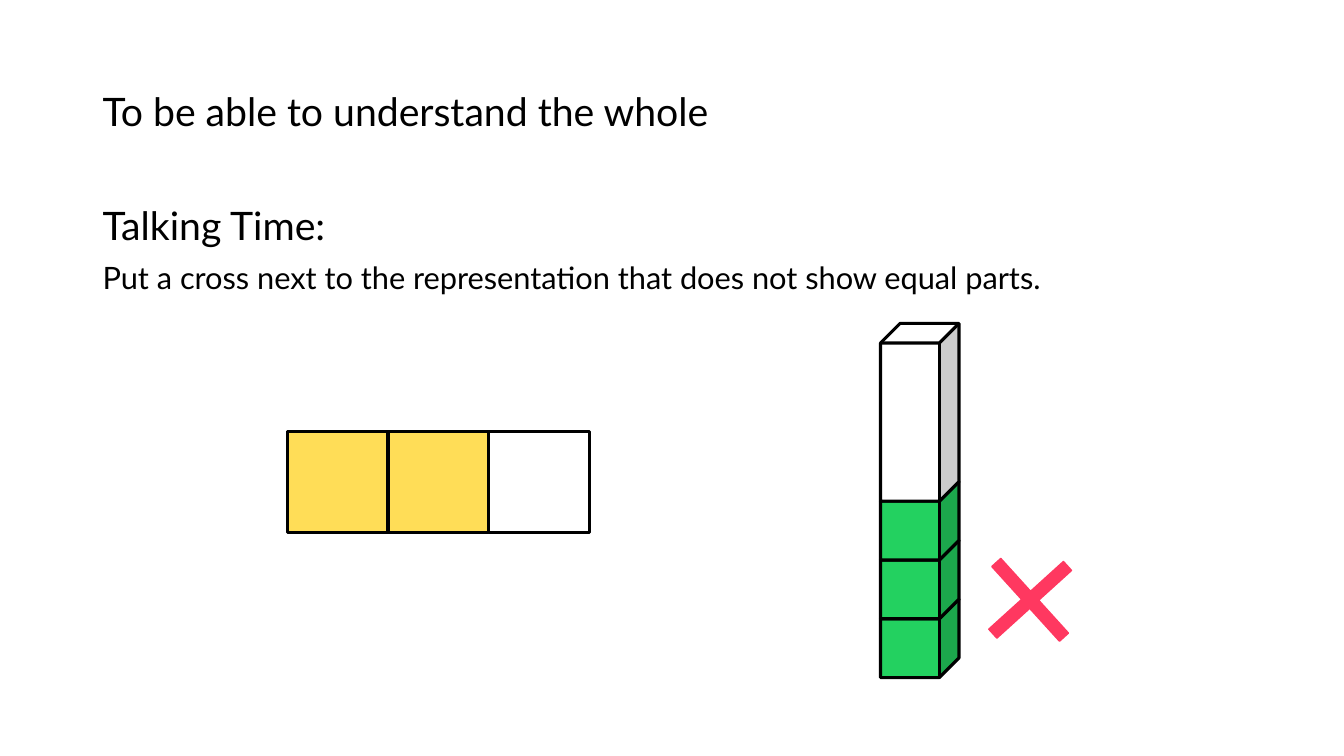
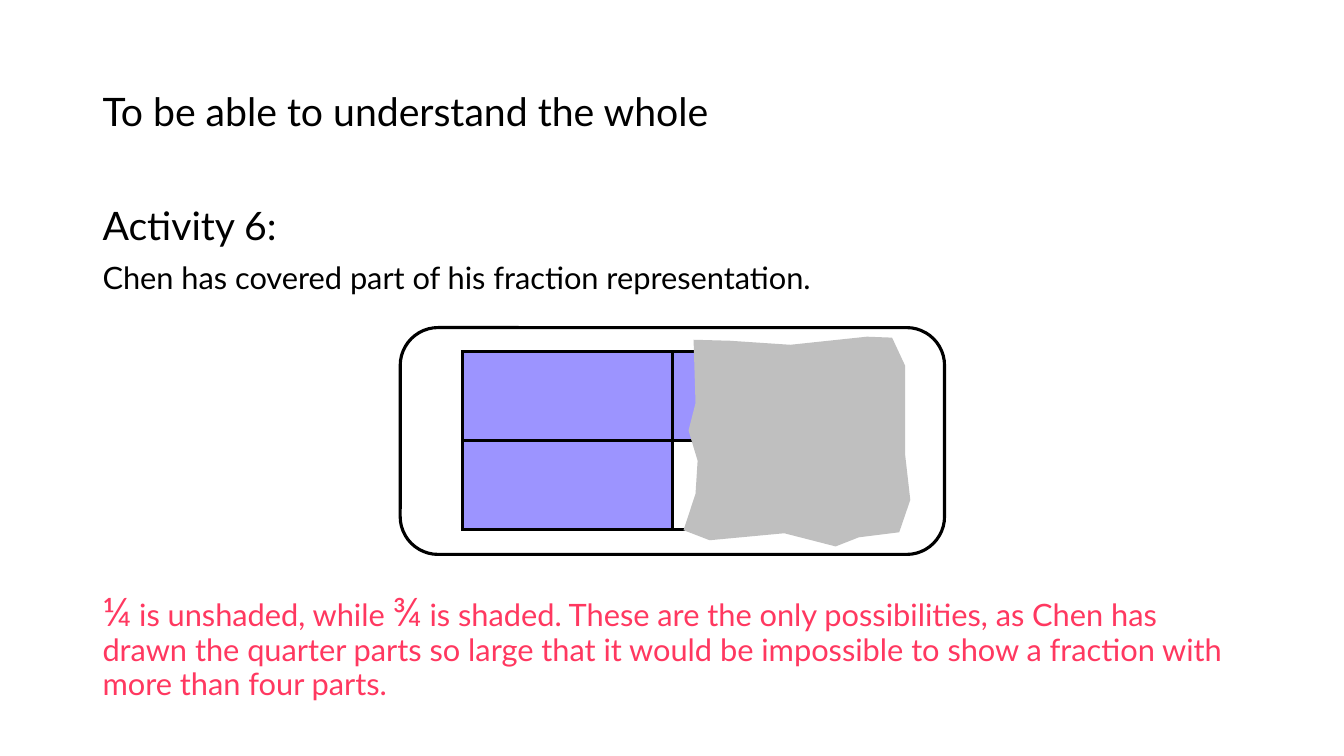
from lxml import etree
from pptx import Presentation
from pptx.dml.color import RGBColor
from pptx.enum.shapes import MSO_SHAPE as Preset
from pptx.enum.text import MSO_ANCHOR as Anchor
from pptx.oxml.ns import qn
from pptx.util import Pt

# Shared look
FONT = "Lato"
BLACK, WHITE, RED = "000000", "FFFFFF", "FF3860"
YELLOW, GREEN, PURPLE, GREY = "FFDD57", "23D160", "9C94FF", "BFBFBF"
HEADING, BODY, OUTLINE = 28, 22, 2.25
TITLE_BOX = (66.2, 28.8, 691.2, 104.4)
BODY_BOX = (66.2, 144, 828, 100)
ANSWER_BOX = (66.2, 420, 828, 100)

# Torn edge of the covering sheet, relative to its top left corner
TORN_EDGE = [
    (7.2, 2.2), (8.6, 47.5), (3.6, 67), (10.1, 88.6), (8.6, 112.3),
    (0, 138.2), (18.7, 145.4), (72, 140.4), (108.7, 149.8),
    (125.3, 143.3), (154.1, 139.7), (162, 116.6), (158.4, 85),
    (158.4, 50.4), (158.4, 20.9), (149, 0.7), (131, 0), (76.3, 5.8),
    (33.1, 2.9),
]


def rgb(hex_colour):
    return RGBColor.from_string(hex_colour)


def paint(shape, fill, line=BLACK, width=OUTLINE):
    shape.shadow.inherit = False
    shape.fill.solid()
    shape.fill.fore_color.rgb = rgb(fill)
    if line is None:
        shape.line.fill.background()
    else:
        shape.line.color.rgb = rgb(line)
        shape.line.width = Pt(width)


def add_preset(slide, preset, box, fill, line=BLACK, width=OUTLINE):
    shape = slide.shapes.add_shape(preset, *map(Pt, box))
    paint(shape, fill, line, width)
    return shape


def add_text(slide, box, paragraphs, colour=BLACK, anchor=Anchor.TOP):
    """Each paragraph is a list of (text, size) runs."""
    frame = slide.shapes.add_textbox(*map(Pt, box)).text_frame
    frame.word_wrap = True
    frame.vertical_anchor = anchor
    for index, runs in enumerate(paragraphs):
        paragraph = frame.add_paragraph() if index else frame.paragraphs[0]
        paragraph.line_spacing = 0.9
        paragraph.space_before = Pt(10 if index else 0)
        for text, size in runs:
            run = paragraph.add_run()
            run.text = text
            run.font.name = FONT
            run.font.size = Pt(size)
            run.font.color.rgb = rgb(colour)


def add_lesson_slide(prs, heading, task):
    slide = prs.slides.add_slide(prs.slide_layouts[6])
    add_text(slide, TITLE_BOX,
             [[("To be able to understand the whole", HEADING)]],
             anchor=Anchor.MIDDLE)
    add_text(slide, BODY_BOX, [[(heading, HEADING)], [(task, BODY)]])
    return slide


def add_bar(slide, left, top, side, fills):
    for index, fill in enumerate(fills):
        add_preset(slide, Preset.RECTANGLE,
                   (left + index * side, top, side, side), fill)


def add_tower(slide, left, bottom, side, count, block_height):
    # Each cube hides the depth of the one below it
    depth = side / 4
    step = side - depth
    for index in range(count):
        add_preset(slide, Preset.CUBE,
                   (left, bottom - side - index * step, side, side), GREEN)
    block_bottom = bottom - count * step
    add_preset(slide, Preset.CUBE,
               (left, block_bottom - block_height, side, block_height), WHITE)


def add_cross(slide, left, top, size):
    cross = add_preset(slide, Preset.CROSS, (left, top, size, size),
                       RED, RED, 1)
    cross.adjustments[0] = 0.44
    cross.rotation = 227.8


def set_borders(cell):
    properties = cell._tc.get_or_add_tcPr()
    for position, side in enumerate(("lnL", "lnR", "lnT", "lnB")):
        border = etree.Element(qn("a:" + side), w=str(Pt(OUTLINE)))
        fill = etree.SubElement(border, qn("a:solidFill"))
        etree.SubElement(fill, qn("a:srgbClr"), val=BLACK)
        properties.insert(position, border)


def add_quarters(slide, box, fills):
    table = slide.shapes.add_table(len(fills), len(fills[0]),
                                   *map(Pt, box)).table
    table.first_row = table.horz_banding = False
    for row, row_fills in enumerate(fills):
        for column, fill in enumerate(row_fills):
            cell = table.cell(row, column)
            cell.fill.solid()
            cell.fill.fore_color.rgb = rgb(fill)
            set_borders(cell)


def add_torn_sheet(slide, left, top):
    start, *rest = [(Pt(x), Pt(y)) for x, y in TORN_EDGE]
    builder = slide.shapes.build_freeform(*start)
    builder.add_line_segments(rest, close=True)
    paint(builder.convert_to_shape(Pt(left), Pt(top)), GREY, None)


def add_covered_card(slide, left, top, width, height):
    add_preset(slide, Preset.ROUNDED_RECTANGLE,
               (left, top, width, height), WHITE)
    add_quarters(slide, (left + 44.6, top + 17.3, 299.6, 126.8),
                 [[PURPLE, PURPLE], [PURPLE, WHITE]])
    add_torn_sheet(slide, left + 202.3, top + 6.5)


def build_talking_time(prs):
    slide = add_lesson_slide(
        prs, "Talking Time:",
        "Put a cross next to the representation that does not show "
        "equal parts.")
    add_bar(slide, 205.2, 308.2, 72, [YELLOW, YELLOW, WHITE])
    add_tower(slide, 629, 484, 56, 3, 127)
    add_cross(slide, 699.8, 392.4, 72)


def build_activity(prs):
    slide = add_lesson_slide(
        prs, "Activity 6:",
        "Chen has covered part of his fraction representation.")
    add_covered_card(slide, 285.9, 234, 388.8, 162)
    add_text(slide, ANSWER_BOX, [[
        ("¼", HEADING), (" is unshaded, while ", BODY), ("¾", HEADING),
        (" is shaded. These are the only possibilities, as Chen has drawn "
         "the quarter parts so large that it would be impossible to show "
         "a fraction with more than four parts.", BODY),
    ]], RED)


def main():
    prs = Presentation()
    prs.slide_width, prs.slide_height = Pt(960), Pt(540)
    build_talking_time(prs)
    build_activity(prs)
    prs.save("out.pptx")


if __name__ == "__main__":
    main()
